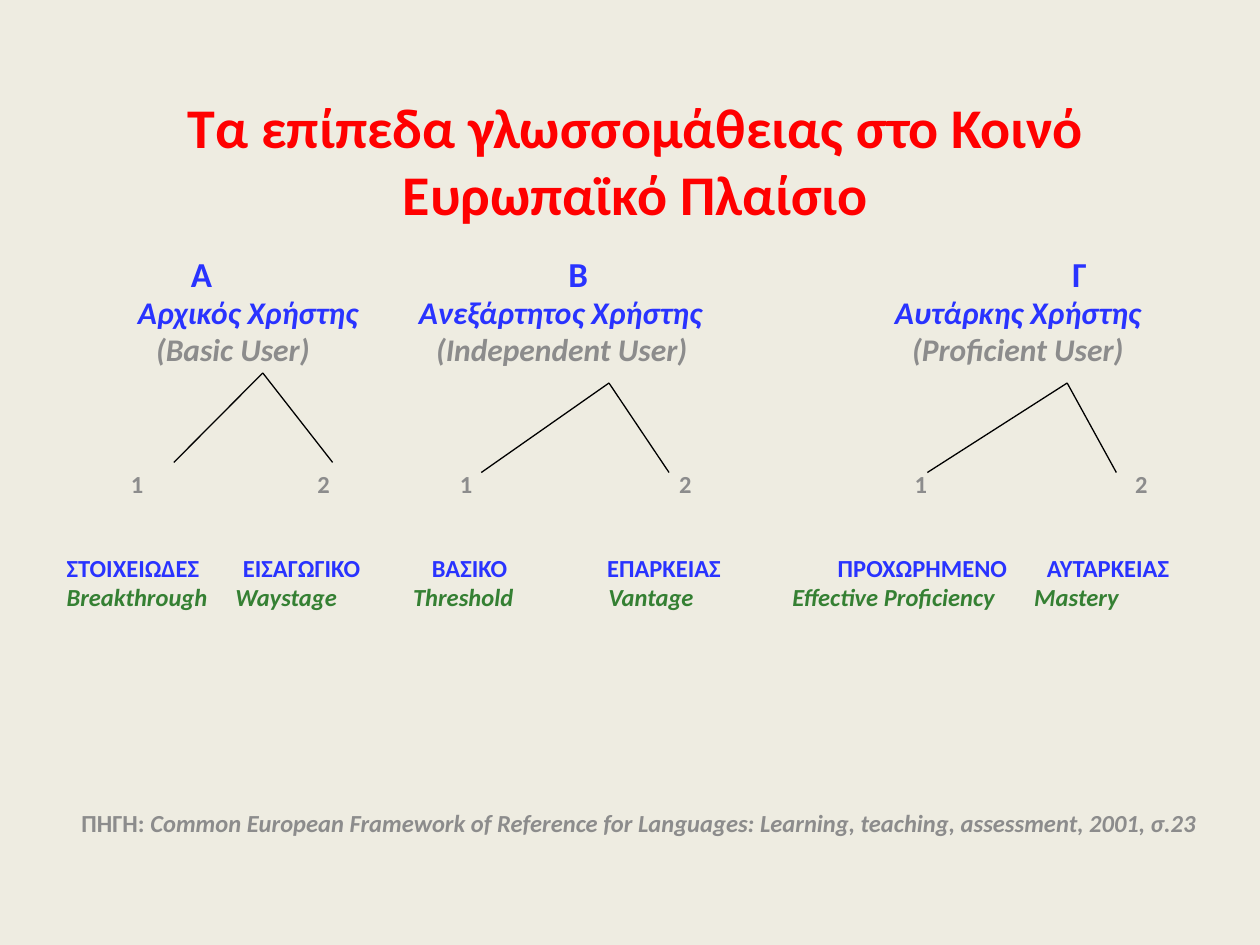
from lxml import etree
from pptx import Presentation
from pptx import util as u
from pptx.dml.color import RGBColor
from pptx.enum import shapes, text
from pptx.oxml.ns import qn

COLS, ROWS = 100, 75
CELL = u.Inches(0.1)
INK = {"back": "EEECE1", "title": "FF0000", "blue": "2933FF",
       "gray": "8C8C8C", "green": "358033", "line": "000000"}
MID = text.PP_ALIGN.CENTER

LEVELS = [
    ("\tΑ\tΒ\tΓ", dict(size=20, ink="blue", stops=(10.7, 40.6, 80.4))),
    ("\tΑρχικός Χρήστης\tΑνεξάρτητος Χρήστης\tΑυτάρκης Χρήστης",
     dict(size=18, ink="blue", slant=True, gap=3.6, stops=(14.4, 39.2, 75.5))),
    ("\t(Basic User)\t(Independent User)\t(Proficient User)",
     dict(size=18, slant=True, gap=3.6, stops=(13.2, 39.3, 75.5))),
    ("\t1\t2\t1\t2\t1\t2",
     dict(gap=61.5, stops=(5.6, 20.4, 31.7, 49.1, 67.8, 85.3))),
    ("ΣΤΟΙΧΕΙΩΔΕΣ\tΕΙΣΑΓΩΓΙΚΟ\tΒΑΣΙΚΟ\tΕΠΑΡΚΕΙΑΣ\tΠΡΟΧΩΡΗΜΕΝΟ\tΑΥΤΑΡΚΕΙΑΣ",
     dict(ink="blue", gap=34.5, edge="l", stops=(14, 29, 42.9, 61.2, 77.8))),
    ("Breakthrough\tWaystage\tThreshold\tVantage\tEffective Proficiency\tMastery",
     dict(ink="green", slant=True, gap=2.8, edge="l",
          stops=(13.4, 27.5, 43, 57.6, 76.8))),
]
FORKS = [((13.8, 29.6, 12.6, 7.1), 0.56),
         ((38.2, 30.4, 14.9, 7.1), 0.68),
         ((73.6, 30.4, 15, 7.1), 0.74)]


def grid(*cells):
    """Turn grid cells into lengths."""
    return [round(CELL * c) for c in cells]


def tint(name):
    """Return a named colour."""
    return RGBColor.from_string(INK[name])


def tabs(par, stops, edge):
    """Add tab stops, in grid cells, to a paragraph."""
    items = etree.SubElement(par._p.get_or_add_pPr(), qn("a:tabLst"))
    for pos in grid(*stops):
        etree.SubElement(items, qn("a:tab"), pos=str(pos), algn=edge)


def write(par, words, size=14, ink="gray", slant=False, gap=None,
          align=None, lead=0.8, stops=(), edge="ctr"):
    """Add a formatted run to a paragraph."""
    if stops:
        tabs(par, stops, edge)
    par.line_spacing = lead
    if align is not None:
        par.alignment = align
    if gap is not None:
        par.space_before = u.Pt(gap)
    run = par.add_run()
    run.text = words
    font = run.font
    font.name, font.size = "Calibri", u.Pt(size)
    font.bold, font.italic = True, slant
    font.color.rgb = tint(ink)


def head(slide, box):
    """Place the title."""
    shape = slide.shapes.title
    shape.left, shape.top, shape.width, shape.height = grid(*box)
    frame = shape.text_frame
    frame.word_wrap = True
    frame.auto_size = text.MSO_AUTO_SIZE.NONE
    frame.vertical_anchor = text.MSO_ANCHOR.MIDDLE
    write(frame.paragraphs[0], "Τα επίπεδα γλωσσομάθειας στο Κοινό Ευρωπαϊκό Πλαίσιο",
          size=32, ink="title", align=MID, lead=1.0)


def body(slide, box):
    """Place the levels and their source."""
    frame = slide.shapes.add_textbox(*grid(*box)).text_frame
    frame.word_wrap = True
    for i, (words, form) in enumerate(LEVELS):
        par = frame.add_paragraph() if i else frame.paragraphs[0]
        write(par, words, **form)
    par = frame.add_paragraph()
    write(par, "ΠΗΓΗ: ", gap=116, align=MID)
    write(par, "Common European Framework of Reference for Languages: "
          "Learning, teaching, assessment, 2001, σ.23", slant=True)


def fork(slide, box, share):
    """Draw two branches from an apex at a share of the box width."""
    left, top, wide, high = box
    for foot in (left, left + wide):
        ends = grid(left + wide * share, top, foot, top + high)
        line = slide.shapes.add_connector(shapes.MSO_CONNECTOR.STRAIGHT, *ends)
        line.line.color.rgb = tint("line")
        line.line.width = u.Pt(0.75)
        etree.SubElement(line._element.spPr, qn("a:effectLst"))


def main():
    """Build the slide."""
    deck = Presentation()
    deck.slide_width, deck.slide_height = grid(COLS, ROWS)
    slide = deck.slides.add_slide(deck.slide_layouts[5])
    slide.background.fill.solid()
    slide.background.fill.fore_color.rgb = tint("back")
    head(slide, (11.7, 7.6, 77.5, 10.2))
    body(slide, (4.3, 20.2, 92.9, 48))
    for box, share in FORKS:
        fork(slide, box, share)
    deck.save("out.pptx")


if __name__ == "__main__":
    main()
